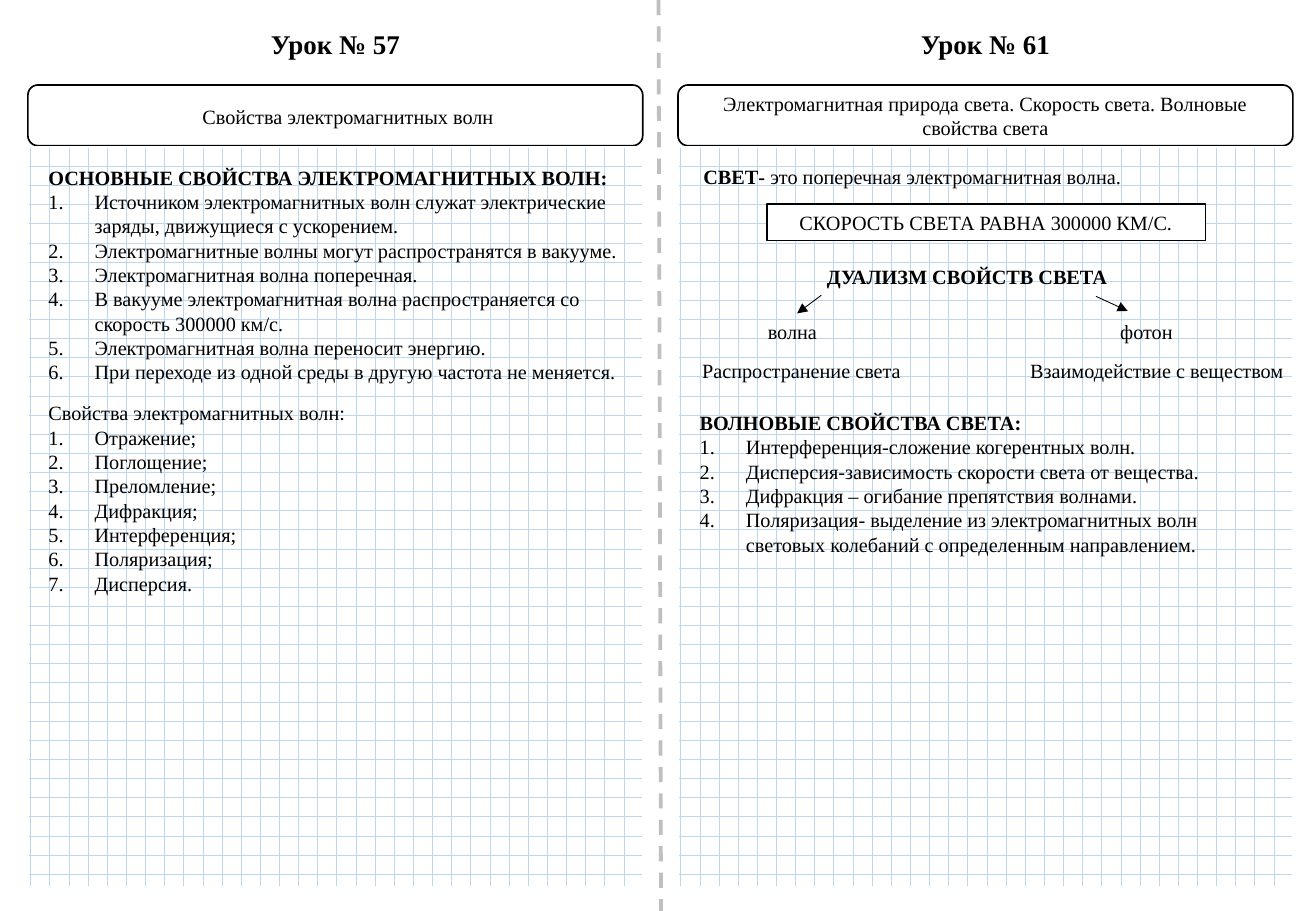
from lxml import etree
from pptx import Presentation
from pptx import util as u
from pptx.dml.color import RGBColor
from pptx.enum import dml, shapes, text
from pptx.oxml import ns

BLACK = RGBColor(0x00, 0x00, 0x00)
WHITE = RGBColor(0xFF, 0xFF, 0xFF)
GREY = RGBColor(0xBF, 0xBF, 0xBF)
GRID_BLUE = RGBColor(0xBD, 0xD7, 0xEE)
FONT = "Times New Roman"
LEFT, CENTER = text.PP_ALIGN.LEFT, text.PP_ALIGN.CENTER

# Lengths are in px, 100 to the inch
PX = u.Inches(1) // 100
SLIDE_W, SLIDE_H = 1083, 750
PAGE_W = 506
PAGE_LEFTS = (23, 558)
TITLE_Y, TITLE_H = 18, 37
TOPIC_Y, TOPIC_H = 70, 50
GRID_Y, GRID_H = 121, 609
LIST_INDENT = 38

LESSONS = ["Урок № 57", "Урок № 61"]
LIGHT_TOPIC = "Электромагнитная природа света. Скорость света. Волновые свойства света"
SPEED_OF_LIGHT = "СКОРОСТЬ СВЕТА РАВНА 300000 КМ/С."
SPEED_BOX = (631, 168, 361, 30)

# (left, top, width, height), alignment, bold part, plain part
LABELS = [
    ((20, 81, 533, 30), CENTER, "", "Свойства электромагнитных волн"),
    ((569, 130, 484, 30), LEFT, "СВЕТ- ", "это поперечная электромагнитная волна."),
    ((656, 213, 280, 30), CENTER, "ДУАЛИЗМ СВОЙСТВ СВЕТА", ""),
    ((622, 258, 135, 30), LEFT, "", "волна"),
    ((912, 258, 135, 30), LEFT, "", "фотон"),
    ((568, 290, 207, 30), LEFT, "", "Распространение света"),
    ((838, 290, 235, 30), LEFT, "", "Взаимодействие с веществом"),
]

# (left, top, width, height), heading, heading is bold, numbered items
LISTS = [
    ((30, 131, 491, 192), "ОСНОВНЫЕ СВОЙСТВА ЭЛЕКТРОМАГНИТНЫХ ВОЛН:", True, [
        "Источником электромагнитных волн служат электрические заряды, движущиеся с ускорением.",
        "Электромагнитные волны могут распространятся в вакууме.",
        "Электромагнитная волна поперечная.",
        "В вакууме электромагнитная волна распространяется со скорость 300000 км/с.",
        "Электромагнитная волна переносит энергию.",
        "При переходе из одной среды в другую частота не меняется.",
    ]),
    ((30, 325, 272, 172), "Свойства электромагнитных волн:", False, [
        "Отражение;", "Поглощение;", "Преломление;", "Дифракция;",
        "Интерференция;", "Поляризация;", "Дисперсия.",
    ]),
    ((566, 333, 491, 151), "ВОЛНОВЫЕ СВОЙСТВА СВЕТА:", True, [
        "Интерференция-сложение когерентных волн.",
        "Дисперсия-зависимость скорости света от вещества.",
        "Дифракция – огибание препятствия волнами.",
        "Поляризация- выделение из электромагнитных волн световых колебаний с определенным направлением.",
    ]),
]

FOLD = (542, 0, 544, 750)
DUALISM_ARROWS = [(676, 243, 656, 258), (902, 244, 928, 256)]


def emu(lengths):
    return [length * PX for length in lengths]


def write(paragraph, wording, bold=False, size=12):
    run = paragraph.add_run()
    run.text = wording
    look = {"name": FONT, "size": u.Pt(size), "bold": bold}
    for key, value in look.items():
        setattr(run.font, key, value)
    run.font.color.rgb = BLACK


def fit(frame):
    frame.word_wrap = True
    frame.auto_size = text.MSO_AUTO_SIZE.SHAPE_TO_FIT_TEXT


def add_label(slide, box, align=LEFT):
    """Add an empty text box and return its frame."""
    frame = slide.shapes.add_textbox(*emu(box)).text_frame
    fit(frame)
    frame.paragraphs[0].alignment = align
    return frame


def add_panel(slide, kind, box, line_color=BLACK):
    panel = slide.shapes.add_shape(kind, *emu(box))
    panel.shadow.inherit = False
    panel.fill.solid()
    panel.fill.fore_color.rgb = WHITE
    panel.line.color.rgb = line_color
    panel.line.width = u.Pt(1)
    panel.text_frame.word_wrap = True
    panel.text_frame.vertical_anchor = text.MSO_ANCHOR.MIDDLE
    panel.text_frame.paragraphs[0].alignment = CENTER
    return panel


def add_line(slide, ends, color, width):
    line = slide.shapes.add_connector(shapes.MSO_CONNECTOR.STRAIGHT, *emu(ends))
    line.line.color.rgb = color
    line.line.width = u.Pt(width)
    etree.SubElement(line._element.spPr, ns.qn("a:effectLst"))
    return line


def add_list(slide, box, heading, bold, items):
    frame = add_label(slide, box)
    write(frame.paragraphs[0], heading, bold)
    for item in items:
        paragraph = frame.add_paragraph()
        write(paragraph, item)
        props = paragraph._p.get_or_add_pPr()
        props.set("marL", str(LIST_INDENT * PX))
        props.set("indent", str(-LIST_INDENT * PX))
        etree.SubElement(props, ns.qn("a:buFont"), typeface="+mj-lt")
        etree.SubElement(props, ns.qn("a:buAutoNum"), type="arabicPeriod")


def main():
    deck = Presentation()
    deck.slide_width, deck.slide_height = emu((SLIDE_W, SLIDE_H))
    slide = deck.slides.add_slide(deck.slide_layouts[6])

    fold = add_line(slide, FOLD, GREY, 2.25)
    fold.line.dash_style = dml.MSO_LINE.DASH

    topics = []
    for left, lesson in zip(PAGE_LEFTS, LESSONS):
        title = add_label(slide, (left, TITLE_Y, PAGE_W, TITLE_H), CENTER)
        write(title.paragraphs[0], lesson, bold=True, size=16)
        topics.append(add_panel(slide, shapes.MSO_SHAPE.FLOWCHART_ALTERNATE_PROCESS,
                                (left, TOPIC_Y, PAGE_W, TOPIC_H)))
        grid = add_panel(slide, shapes.MSO_SHAPE.FLOWCHART_PROCESS,
                         (left, GRID_Y, PAGE_W, GRID_H), WHITE)
        grid.fill.patterned()
        grid.fill.pattern = dml.MSO_PATTERN.DOTTED_GRID
        grid.fill.fore_color.rgb = GRID_BLUE
        grid.fill.back_color.rgb = WHITE
    write(topics[1].text_frame.paragraphs[0], LIGHT_TOPIC)

    for numbered in LISTS:
        add_list(slide, *numbered)

    speed = add_panel(slide, shapes.MSO_SHAPE.RECTANGLE, SPEED_BOX).text_frame
    speed.vertical_anchor = text.MSO_ANCHOR.TOP
    fit(speed)
    write(speed.paragraphs[0], SPEED_OF_LIGHT)

    for box, align, strong, plain in LABELS:
        label = add_label(slide, box, align).paragraphs[0]
        for wording, bold in ((strong, True), (plain, False)):
            if wording:
                write(label, wording, bold)

    for ends in DUALISM_ARROWS:
        arrow = add_line(slide, ends, BLACK, 0.5)
        etree.SubElement(arrow.line._get_or_add_ln(), ns.qn("a:tailEnd"), type="triangle")

    deck.save("out.pptx")


if __name__ == "__main__":
    main()
